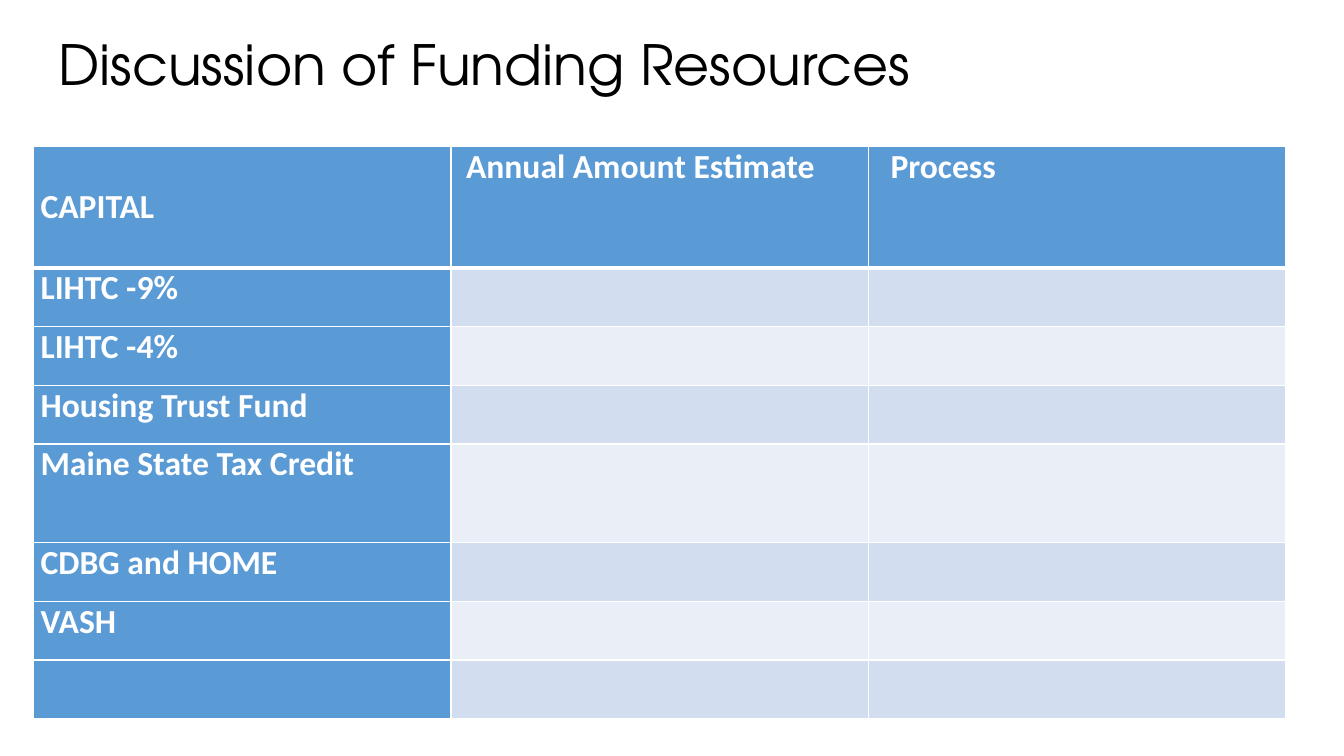
from lxml.etree import SubElement
from pptx import Presentation
from pptx.dml.color import RGBColor
from pptx.enum.text import MSO_ANCHOR, MSO_AUTO_SIZE, PP_ALIGN
from pptx.oxml.ns import qn
from pptx.util import Inches, Pt

COLORS = {
    "ink": "000000",
    "paper": "FFFFFF",
    "heading": "5B9BD5",
    "band_dark": "D2DEEF",
    "band_light": "EAEFF7",
}
TITLE_FONT, TABLE_FONT = "TeX Gyre Adventor", "Calibri"
THIN, THICK = 1, 3

HEADINGS = ["CAPITAL", "Annual Amount Estimate", "Process"]
HEADING_INDENTS = [0.07, 0.15, 0.22]  # inches
RESOURCES = [
    "LIHTC -9%",
    "LIHTC -4%",
    "Housing Trust Fund",
    "Maine State Tax Credit",
    "CDBG and HOME",
    "VASH",
    "",
]
# Row heights in percent of the slide's height
HEADING_ROW, PLAIN_ROW, TALL_ROW = 16.13, 7.76, 13.07


def write_text(frame, text, *, font, size, color, bold=False, spacing=None):
    paragraph = frame.paragraphs[0]
    paragraph.alignment = PP_ALIGN.LEFT
    paragraph.line_spacing = spacing
    run = paragraph.add_run()
    run.text = text
    run.font.name = font
    run.font.size = Pt(size)
    run.font.bold = bold
    run.font.color.rgb = RGBColor.from_string(COLORS[color])


def add_borders(cell, top, bottom):
    """Draw white cell borders; must run before the cell's fill is set."""
    properties = cell._tc.get_or_add_tcPr()
    for side, width in {"L": THIN, "R": THIN, "T": top, "B": bottom}.items():
        border = SubElement(properties, qn(f"a:ln{side}"), w=str(Pt(width)))
        fill = SubElement(border, qn("a:solidFill"))
        SubElement(fill, qn("a:srgbClr"), val=COLORS["paper"])


class FundingSlide:
    """Slide whose lengths are given in percent of its width and height."""

    def __init__(self, deck):
        self.deck = deck
        self.slide = deck.slides.add_slide(deck.slide_layouts[5])

    def across(self, percent):
        return round(self.deck.slide_width * percent / 100)

    def down(self, percent):
        return round(self.deck.slide_height * percent / 100)

    def add_title(self, text, left, top, width, height):
        title = self.slide.shapes.title
        title.left, title.top = self.across(left), self.down(top)
        title.width, title.height = self.across(width), self.down(height)
        frame = title.text_frame
        frame.word_wrap = True
        frame.auto_size = MSO_AUTO_SIZE.NONE
        frame.vertical_anchor = MSO_ANCHOR.MIDDLE
        write_text(frame, text, font=TITLE_FONT, size=39.6, color="ink", spacing=0.9)

    def add_resource_table(self, left, top, width, row_heights):
        table = self.slide.shapes.add_table(
            len(row_heights), len(HEADINGS),
            self.across(left), self.down(top),
            self.across(width), self.down(sum(row_heights)),
        ).table
        table.first_col = True
        for row, height in zip(table.rows, row_heights):
            row.height = self.down(height)
        for column, heading in enumerate(HEADINGS):
            self.fill_cell(table, 0, column, heading, HEADING_INDENTS[column])
            for row, resource in enumerate(RESOURCES, start=1):
                label = resource if column == 0 else ""
                self.fill_cell(table, row, column, label, HEADING_INDENTS[0])
        table.cell(0, 0).vertical_anchor = MSO_ANCHOR.MIDDLE

    def fill_cell(self, table, row, column, text, indent):
        cell = table.cell(row, column)
        add_borders(cell, THICK if row == 1 else THIN, THICK if row == 0 else THIN)
        if row == 0 or column == 0:
            color = "heading"
        else:
            color = "band_dark" if row % 2 else "band_light"
        cell.fill.solid()
        cell.fill.fore_color.rgb = RGBColor.from_string(COLORS[color])
        if text:
            cell.margin_left, cell.margin_right = Inches(indent), Inches(0.07)
            cell.margin_top = cell.margin_bottom = 0
            write_text(cell.text_frame, text, font=TABLE_FONT, size=24,
                       color="paper", bold=True)


def main():
    deck = Presentation()
    deck.slide_width, deck.slide_height = Inches(13.33), Inches(7.5)
    funding = FundingSlide(deck)
    funding.add_title("Discussion of Funding Resources", 3.6, 5.73, 86.27, 6.53)
    resource_rows = [
        TALL_ROW if resource == "Maine State Tax Credit" else PLAIN_ROW
        for resource in RESOURCES
    ]
    funding.add_resource_table(2.5, 19.33, 93.17, [HEADING_ROW, *resource_rows])
    deck.save("out.pptx")


if __name__ == "__main__":
    main()
